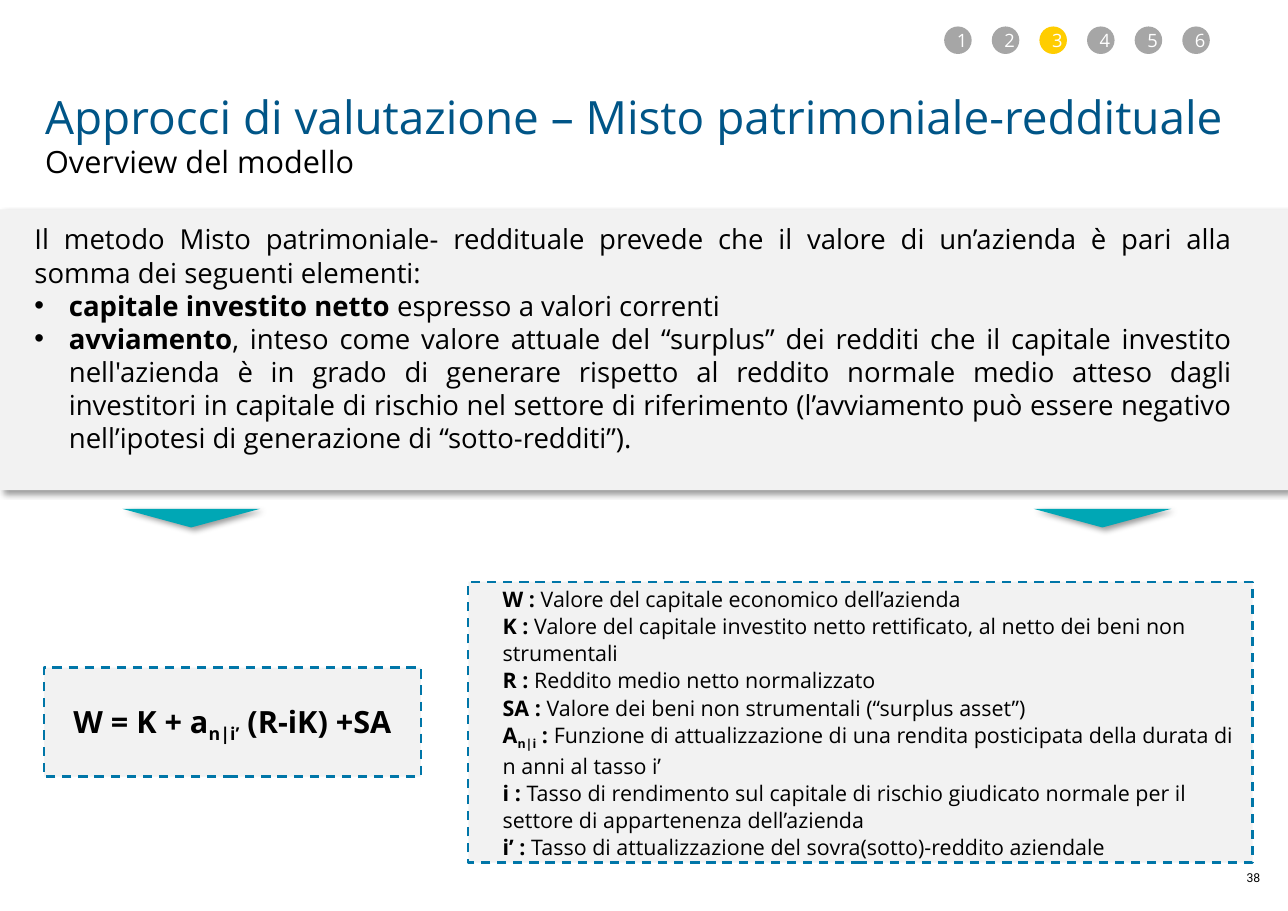
from lxml import etree
from pptx import Presentation
from pptx.dml.color import RGBColor
from pptx.enum import dml, shapes, text
from pptx.oxml import ns
from pptx.util import Pt

BLACK = RGBColor(0x00, 0x00, 0x00)
WHITE = RGBColor(0xFF, 0xFF, 0xFF)
LIGHT = RGBColor(0xF2, 0xF2, 0xF2)
GREY = RGBColor(0xA6, 0xA6, 0xA6)
YELLOW = RGBColor(0xFF, 0xCD, 0x00)
TEAL = RGBColor(0x00, 0xA7, 0xB5)
BLUE = RGBColor(0x00, 0x76, 0xA8)
NAVY = RGBColor(0x00, 0x55, 0x87)

# A paragraph is a list of (text, style): "" plain, "b" bold, "bs" bold subscript
TITLE = "Approcci di valutazione – Misto patrimoniale-reddituale"
SUBTITLE = "Overview del modello"
PAGE_NUMBER = "38"
SECTIONS, CURRENT_SECTION = 6, 3
INTRO = [("Il metodo Misto patrimoniale- reddituale prevede che il valore di "
          "un’azienda è pari alla somma dei seguenti elementi: ", "")]
ELEMENTS = [
    [("capitale investito netto ", "b"), ("espresso a valori correnti ", "")],
    [("avviamento", "b"),
     (", inteso come valore attuale del “surplus” dei redditi che il capitale "
      "investito nell'azienda è in grado di generare rispetto al reddito normale "
      "medio atteso dagli investitori in capitale di rischio nel settore di "
      "riferimento (l’avviamento può essere negativo nell’ipotesi di generazione "
      "di “sotto-redditi”).", "")],
]
FORMULA = [("W = K + a", "b"), ("n|i’", "bs"), (" (R-iK) +SA", "b")]
LEGEND = [
    [("W : ", "b"), ("Valore del capitale economico dell’azienda", "")],
    [("K : ", "b"), ("Valore del capitale investito netto rettificato, "
                     "al netto dei beni non strumentali", "")],
    [("R : ", "b"), ("Reddito medio netto normalizzato", "")],
    [("SA : ", "b"), ("Valore dei beni non strumentali (“surplus asset”)", "")],
    [("A", "b"), ("n|i", "bs"), (" : ", "b"),
     ("Funzione di attualizzazione di una rendita posticipata della durata "
      "di n anni al tasso i’", "")],
    [("i : ", "b"), ("Tasso di rendimento sul capitale di rischio giudicato normale "
                     "per il settore di appartenenza dell’azienda", "")],
    [("i’ : ", "b"), ("Tasso di attualizzazione del sovra(sotto)-reddito aziendale", "")],
]

SLIDE_W, SLIDE_H = 841.68, 595.44
MARGIN = 28.8
DOT_LEFT, DOT_TOP, DOT_SIZE, DOT_STEP = 617, 17.3, 18, 31.12
ARROW_LEFTS = (79.9, 675.4)
INDENT = 22.5

ALIGN = text.PP_ALIGN
KIND = shapes.MSO_SHAPE


def fill_text(s, paragraphs, size, color=BLACK, align=ALIGN.LEFT, insets=None,
              anchor=text.MSO_ANCHOR.TOP, spacing=None, font="Open Sans"):
    """Write the paragraphs into s; insets are left, top, right, bottom."""
    tf = s.text_frame
    tf.word_wrap = True
    tf.vertical_anchor = anchor
    if insets:
        (tf.margin_left, tf.margin_top,
         tf.margin_right, tf.margin_bottom) = map(Pt, insets)
    for i, runs in enumerate(paragraphs):
        p = tf.add_paragraph() if i else tf.paragraphs[0]
        p.alignment = align
        if spacing:
            p.line_spacing = spacing
        for words, style in runs:
            r = p.add_run()
            r.text = words
            r.font.name, r.font.size = font, Pt(size)
            r.font.bold = "b" in style
            r.font.color.rgb = color
            if "s" in style:
                r._r.get_or_add_rPr().set("baseline", "-25000")


def add_bullet(p):
    pPr = p._p.get_or_add_pPr()
    pPr.set("marL", str(Pt(INDENT)))
    pPr.set("indent", str(-Pt(INDENT)))
    etree.SubElement(pPr, ns.qn("a:buFont")).set("typeface", "Arial")
    etree.SubElement(pPr, ns.qn("a:buChar")).set("char", "•")


def add_shape(slide, kind, box, fill):
    s = slide.shapes.add_shape(kind, *map(Pt, box))
    s.shadow.inherit = False
    s.fill.solid()
    s.fill.fore_color.rgb = fill
    s.line.fill.background()
    return s


def cast_shadow(s):
    effects = s._element.spPr.find(ns.qn("a:effectLst"))
    shadow = etree.SubElement(effects, ns.qn("a:outerShdw"), blurRad=str(Pt(4)),
                              dist=str(Pt(3)), dir="2700000", algn="tl",
                              rotWithShape="0")
    color = etree.SubElement(shadow, ns.qn("a:srgbClr"), val=str(BLACK))
    etree.SubElement(color, ns.qn("a:alpha"), val="40000")


def add_dashed_box(slide, box):
    s = add_shape(slide, KIND.RECTANGLE, box, LIGHT)
    s.line.color.rgb = BLUE
    s.line.width = Pt(1.5)
    s.line.dash_style = dml.MSO_LINE.DASH
    return s


def add_label(slide, box, words, size, **options):
    s = slide.shapes.add_textbox(*map(Pt, box))
    fill_text(s, [[(words, "")]], size, **options)


def main():
    prs = Presentation()
    prs.slide_width, prs.slide_height = Pt(SLIDE_W), Pt(SLIDE_H)
    slide = prs.slides.add_slide(prs.slide_layouts[6])
    middle = text.MSO_ANCHOR.MIDDLE

    add_label(slide, (782.6, 565.2, 48.2, 17.3), PAGE_NUMBER, 8,
              align=ALIGN.RIGHT, font="Roboto")

    panel = add_shape(slide, KIND.RECTANGLE, (0, 136.8, SLIDE_W, 183.6), LIGHT)
    cast_shadow(panel)
    fill_text(panel, [INTRO] + ELEMENTS, 18, align=ALIGN.JUSTIFY,
              insets=(22.5, 8.6, 36.7, 7.2))
    for p in panel.text_frame.paragraphs[1:]:
        add_bullet(p)

    for left in ARROW_LEFTS:
        cast_shadow(add_shape(slide, KIND.FLOWCHART_MERGE,
                              (left, 332.6, 90, 12.2), TEAL))

    heading_insets = (0.7, 0.7, 0, 0)
    add_label(slide, (MARGIN, 92.9, 812, 25.2), SUBTITLE, 20, insets=heading_insets)
    add_label(slide, (MARGIN, 56.9, 774, 37.4), TITLE, 30, color=NAVY,
              insets=heading_insets)

    formula = add_dashed_box(slide, (MARGIN, 436.3, 246.2, 71.3))
    fill_text(formula, [FORMULA], 20, align=ALIGN.CENTER, insets=(7.2,) * 4,
              anchor=middle, spacing=1.06)
    legend = add_dashed_box(slide, (306, 380.2, 512.6, 183.6))
    fill_text(legend, LEGEND, 14, insets=(22.5, 7.2, 7.2, 7.2),
              anchor=middle, spacing=1.06)

    for n in range(1, SECTIONS + 1):
        left = DOT_LEFT + (n - 1) * DOT_STEP
        dot = add_shape(slide, KIND.OVAL, (left, DOT_TOP, DOT_SIZE, DOT_SIZE),
                        YELLOW if n == CURRENT_SECTION else GREY)
        fill_text(dot, [[(str(n), "")]], 12, color=WHITE, align=ALIGN.CENTER,
                  anchor=middle)

    prs.save("out.pptx")


if __name__ == "__main__":
    main()
